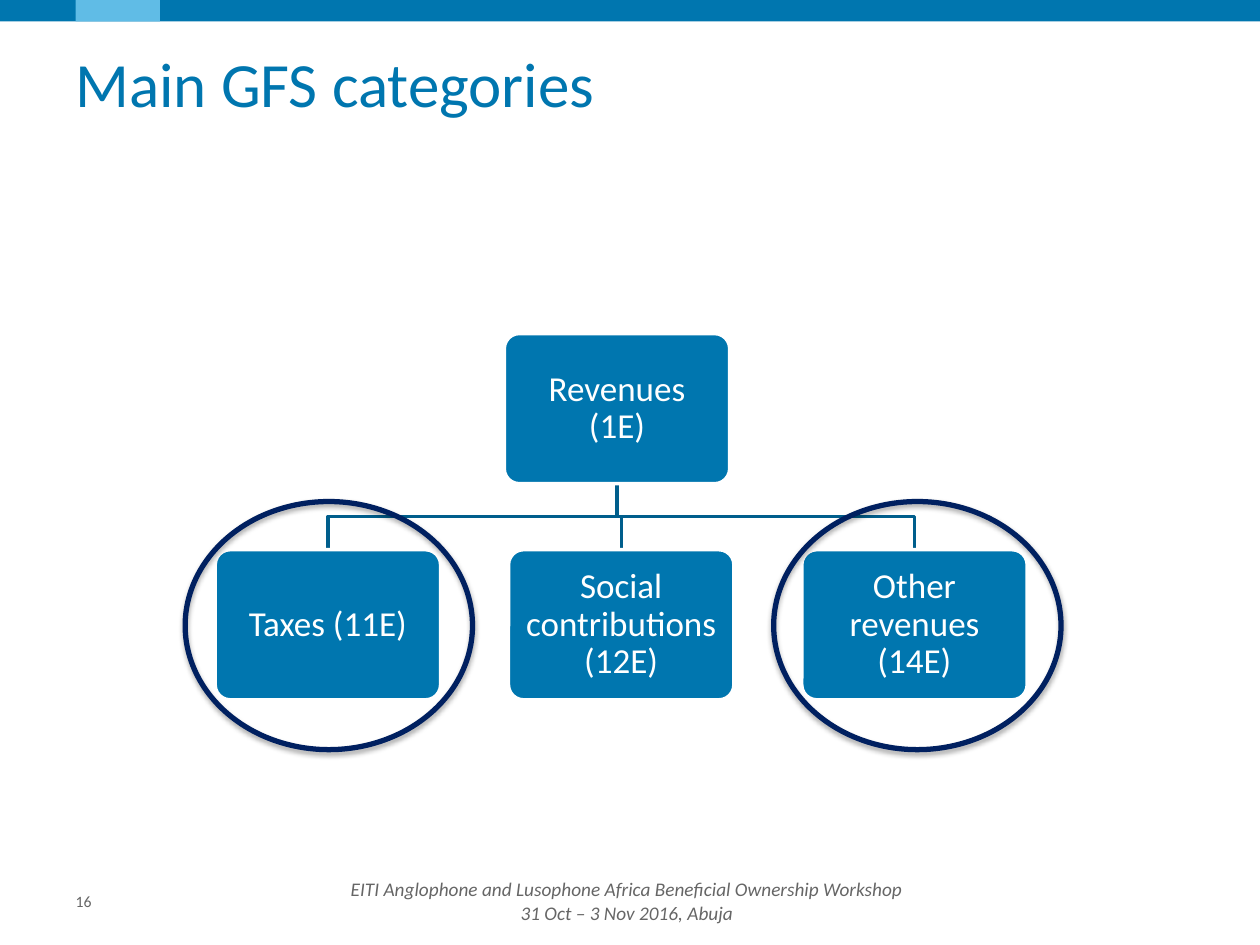
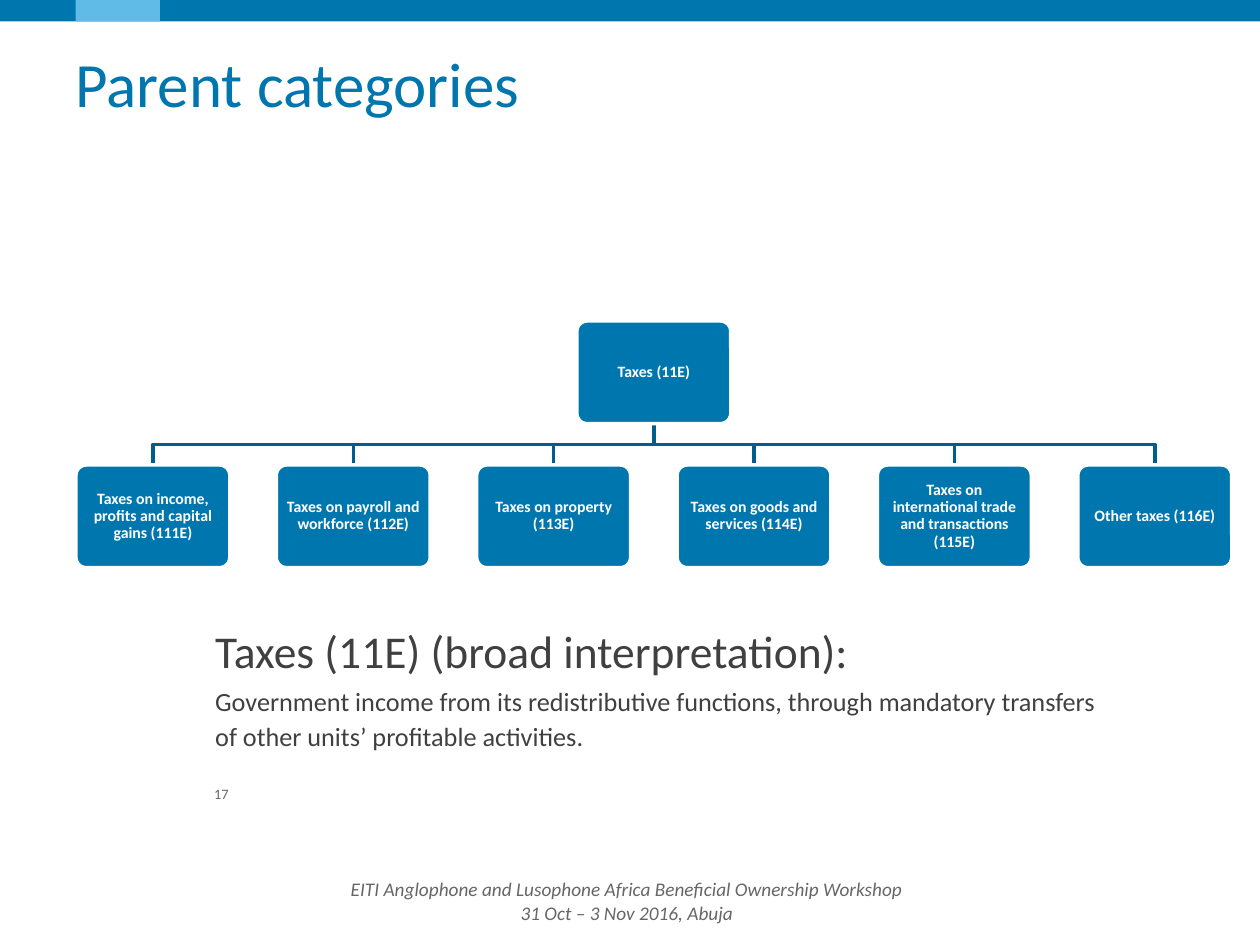
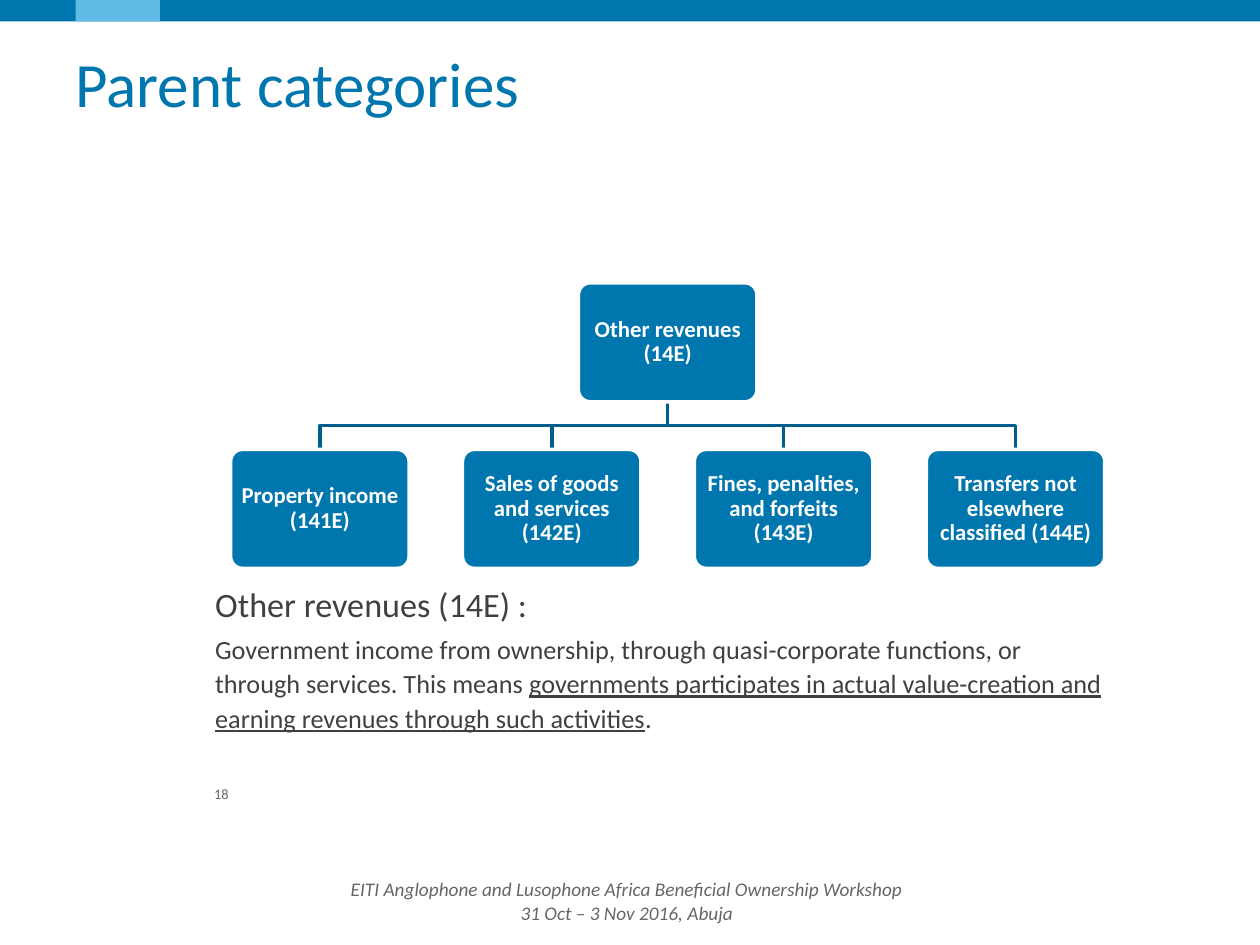
from lxml.etree import SubElement
from pptx import Presentation
from pptx.dml.color import RGBColor
from pptx.enum.shapes import MSO_SHAPE
from pptx.enum.text import MSO_ANCHOR, PP_ALIGN
from pptx.oxml.ns import qn
from pptx.util import Pt

COLORS = {
    "blue": "0076AF",
    "sky": "60BCE6",
    "branch": "005E8C",
    "navy": "002060",
    "white": "FFFFFF",
    "body": "404040",
    "muted": "666666",
    "shadow": "000000",
}
FONT = "Calibri"
LINE_BREAK = "\n"
MARGIN = 43.2
FOOTER_TOP, FOOTER_HEIGHT = 500.4, 28.8
FOOTER = [
    "EITI Anglophone and Lusophone Africa Beneficial Ownership Workshop",
    LINE_BREAK,
    "31 Oct – 3 Nov 2016, Abuja",
]


def color(name):
    return RGBColor.from_string(COLORS[name])


def set_values(target, values):
    for name, value in values.items():
        setattr(target, name, value)


def set_frame(frame, side, top, anchor):
    set_values(frame, {
        "word_wrap": True,
        "vertical_anchor": anchor,
        "margin_left": Pt(side),
        "margin_right": Pt(side),
        "margin_top": Pt(top),
        "margin_bottom": Pt(top),
    })


def write(para, parts, size, color_name, layout=None, **font_values):
    """Fill a paragraph; a part is a text, a line break or a (text, font values) pair."""
    set_values(para, layout or {})
    for part in parts:
        if part == LINE_BREAK:
            para.add_line_break()
            continue
        text, extra = part if isinstance(part, tuple) else (part, {})
        span = para.add_run()
        span.text = text
        span.font.color.rgb = color(color_name)
        set_values(span.font, {"name": FONT, "size": Pt(size), **font_values, **extra})


def add_box(page, left, top, width, height, inset=3.6, anchor=MSO_ANCHOR.MIDDLE):
    box = page.shapes.add_textbox(Pt(left), Pt(top), Pt(width), Pt(height))
    set_frame(box.text_frame, 0, inset, anchor)
    return box.text_frame


def set_look(shape, fill=None, line=None, line_width=2):
    shape.shadow.inherit = False
    if fill:
        shape.fill.solid()
        shape.fill.fore_color.rgb = color(fill)
    else:
        shape.fill.background()
    if line:
        shape.line.color.rgb = color(line)
        shape.line.width = Pt(line_width)
    else:
        shape.line.fill.background()


def add_preset(page, kind, left, top, width, height, **look):
    shape = page.shapes.add_shape(kind, Pt(left), Pt(top), Pt(width), Pt(height))
    set_look(shape, **look)
    return shape


def add_card(page, text, left, top, width, height, size, bold):
    card = add_preset(page, MSO_SHAPE.ROUNDED_RECTANGLE, left, top, width, height,
                      fill="blue", line="white")
    card.adjustments[0] = 0.1
    inset = 0.3 * size
    set_frame(card.text_frame, inset, inset, MSO_ANCHOR.MIDDLE)
    layout = {"alignment": PP_ALIGN.CENTER, "line_spacing": 0.9}
    write(card.text_frame.paragraphs[0], [text], size, "white", layout, bold=bold)


def add_branch(page, start_x, start_y, end_x, end_y):
    middle_y = (start_y + end_y) / 2
    outline = page.shapes.build_freeform(Pt(start_x), Pt(start_y))
    bends = [(start_x, middle_y), (end_x, middle_y), (end_x, end_y)]
    outline.add_line_segments([(Pt(x), Pt(y)) for x, y in bends], close=False)
    set_look(outline.convert_to_shape(), line="branch")


def add_tree(page, root, children, left, root_top, child_top, pitch, width, height,
             size, bold=True, root_shift=0):
    """Draw a root card centred over a row of child cards, moved sideways by root_shift."""
    root_left = left + pitch * (len(children) - 1) / 2 + root_shift
    child_lefts = [left + pitch * index for index in range(len(children))]
    for child_left in child_lefts:
        add_branch(page, root_left + width / 2, root_top + height,
                   child_left + width / 2, child_top)
    add_card(page, root, root_left, root_top, width, height, size, bold)
    for text, child_left in zip(children, child_lefts):
        add_card(page, text, child_left, child_top, width, height, size, bold)


def add_ring(page, left):
    ring = add_preset(page, MSO_SHAPE.OVAL, left, 286.6, 164.2, 141.8,
                      line="navy", line_width=3)
    effects = ring._element.spPr.find(qn("a:effectLst"))
    shadow = SubElement(effects, qn("a:outerShdw"), blurRad=str(Pt(3.1)),
                        dist=str(Pt(1.8)), dir="5400000", rotWithShape="0")
    tint = SubElement(shadow, qn("a:srgbClr"), val=COLORS["shadow"])
    SubElement(tint, qn("a:alpha"), val="35000")


def add_definition(page, top, height, heading, heading_size, sentence):
    frame = add_box(page, 123, top, 507, height, inset=0, anchor=MSO_ANCHOR.TOP)
    write(frame.paragraphs[0], [heading], heading_size, "body", {"line_spacing": 1.1})
    write(frame.add_paragraph(), sentence, 15, "body",
          {"line_spacing": 1.1, "space_before": Pt(3)})


def add_number(page, number, left, top, width, height, size):
    frame = add_box(page, left, top, width, height)
    write(frame.paragraphs[0], [str(number)], size, "muted")


def add_inner_number(page, number):
    add_number(page, number, 122.4, 442.8, 64.8, 21.6, 8.2)


def add_page(deck, title):
    page = deck.slides.add_slide(deck.slide_layouts[6])
    for left, width, fill in [(0, 720, "blue"), (MARGIN, 48.2, "sky")]:
        add_preset(page, MSO_SHAPE.RECTANGLE, left, -0.7, width, 13, fill=fill)
    footer = add_box(page, 175, FOOTER_TOP, 366.5, FOOTER_HEIGHT)
    write(footer.paragraphs[0], FOOTER, 11, "muted",
          {"alignment": PP_ALIGN.CENTER}, italic=True)
    heading = add_box(page, MARGIN, 21.6, 620, 90, anchor=MSO_ANCHOR.TOP)
    write(heading.paragraphs[0], [title], 36, "blue")
    return page


def add_main_categories(deck):
    page = add_page(deck, "Main GFS categories")
    add_number(page, 16, MARGIN, FOOTER_TOP, 86.4, FOOTER_HEIGHT, 9)
    add_tree(page, "Revenues (1E)",
             ["Taxes (11E)", "Social contributions (12E)", "Other revenues (14E)"],
             left=123, root_top=190.6, child_top=314.1, pitch=167.6,
             width=128.8, height=85.8, size=20, bold=False, root_shift=-2.4)
    for left in (105.8, 442.1):
        add_ring(page, left)


def add_tax_categories(deck):
    page = add_page(deck, "Parent categories")
    add_inner_number(page, 17)
    add_tree(page, "Taxes (11E)",
             ["Taxes on income, profits and capital gains (111E)",
              "Taxes on payroll and workforce (112E)",
              "Taxes on property (113E)",
              "Taxes on goods and services (114E)",
              "Taxes on international trade and transactions (115E)",
              "Other taxes (116E)"],
             left=43.4, root_top=183.4, child_top=265.7, pitch=114.5,
             width=88, height=58.7, size=9)
    add_definition(page, 352.8, 83.5, "Taxes (11E) (broad interpretation):", 26, [
        "Government income from its redistributive functions, through mandatory "
        "transfers of other units’ profitable activities."])


def add_other_categories(deck):
    page = add_page(deck, "Parent categories")
    add_inner_number(page, 18)
    add_tree(page, "Other revenues (14E)",
             ["Property income (141E)",
              "Sales of goods and services (142E)",
              "Fines, penalties, and forfeits (143E)",
              "Transfers not elsewhere classified (144E)"],
             left=131.8, root_top=161.6, child_top=256.8, pitch=132.5,
             width=102, height=68, size=13)
    add_definition(page, 331.2, 104.4, "Other revenues (14E) :", 19.5, [
        "Government income from ownership, through quasi-corporate functions, or "
        "through services. This means ",
        ("governments participates in actual value-creation and earning revenues "
         "through such activities", {"underline": True}),
        "."])


def main():
    deck = Presentation()
    set_values(deck, {"slide_width": Pt(720), "slide_height": Pt(540)})
    add_main_categories(deck)
    add_tax_categories(deck)
    add_other_categories(deck)
    deck.save("out.pptx")


if __name__ == "__main__":
    main()
